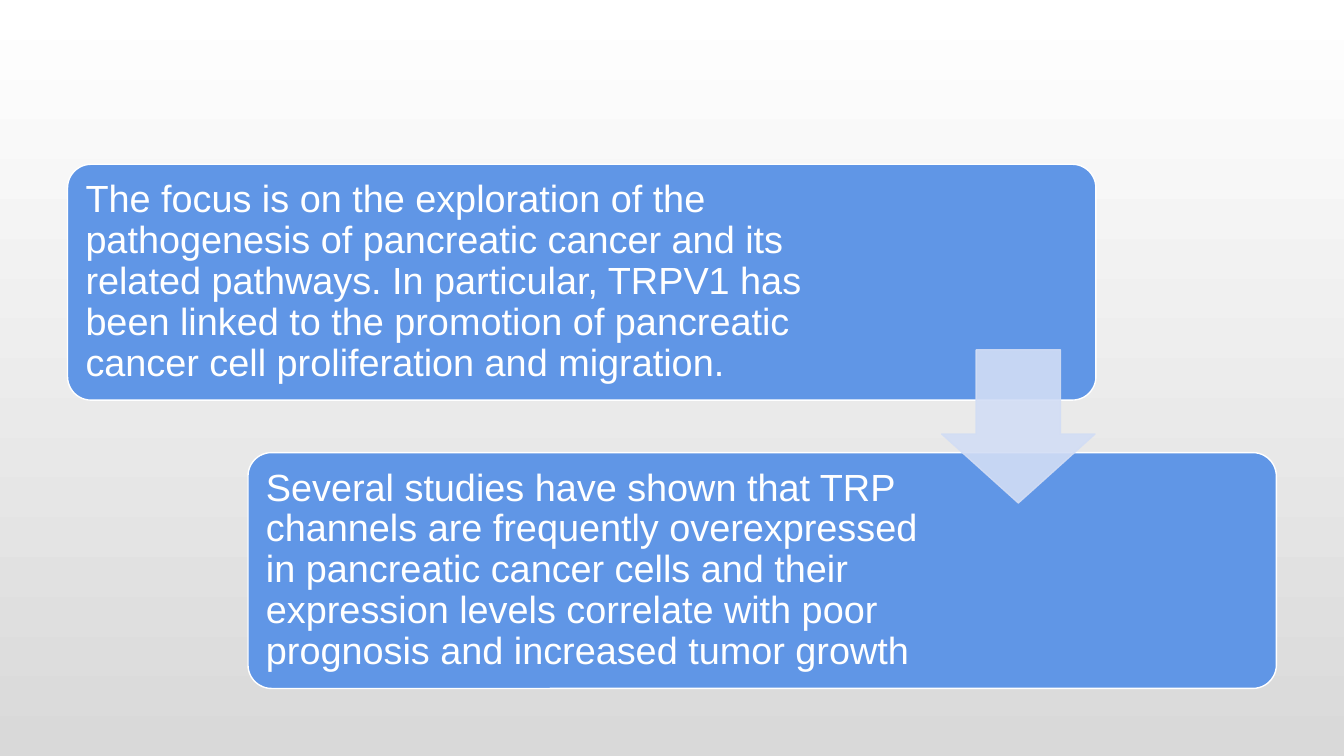
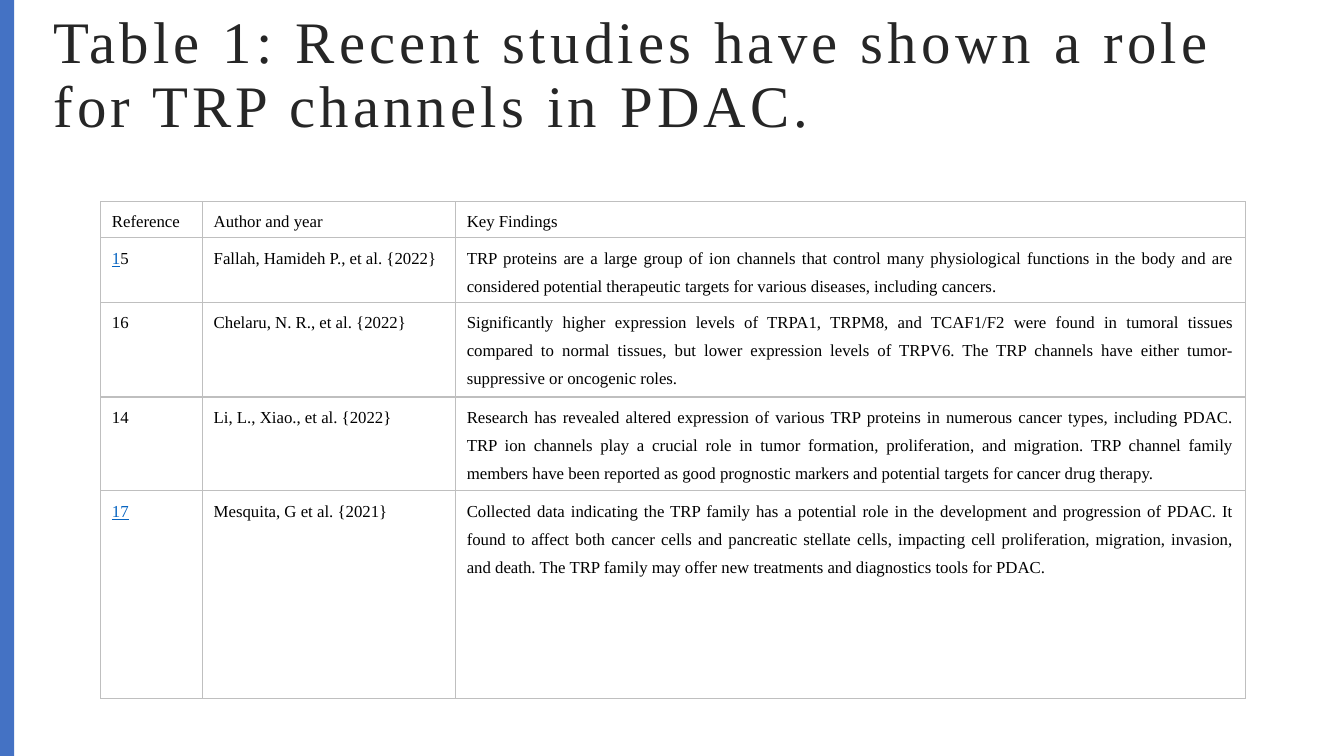
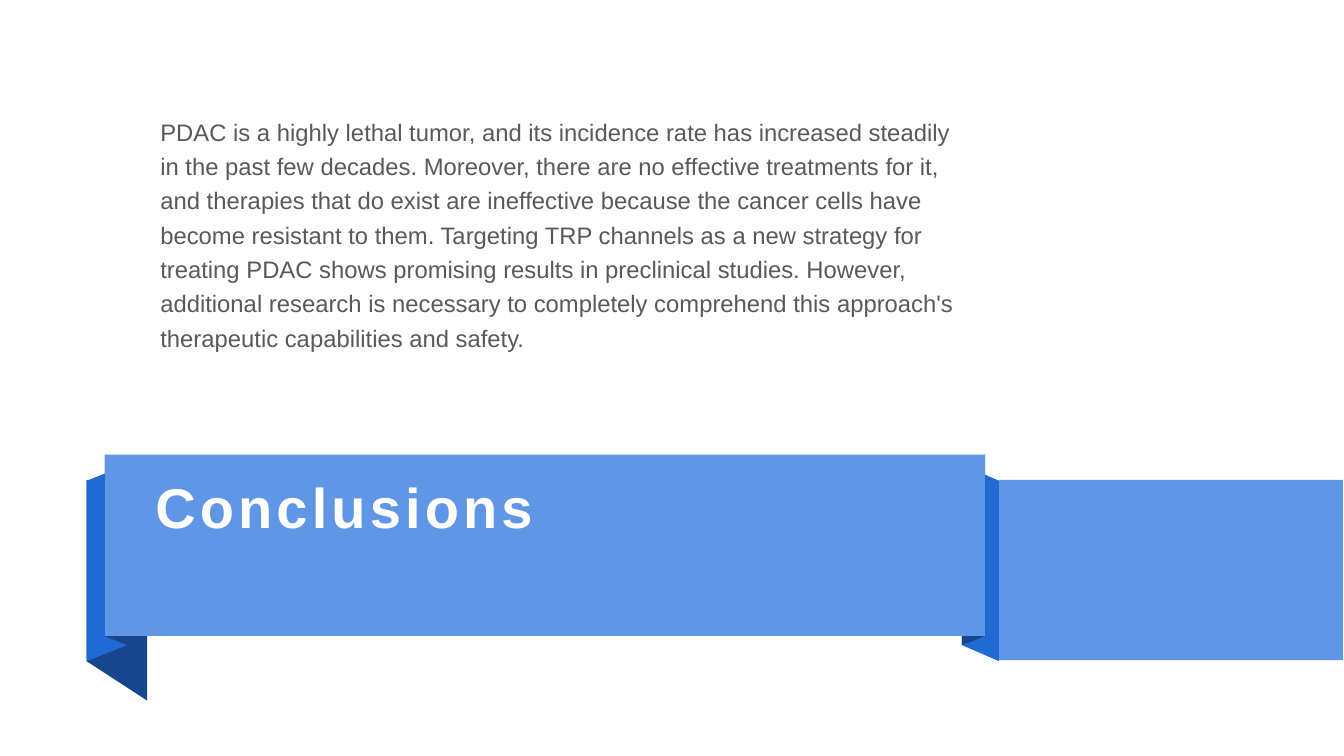
from lxml import etree
from pptx import Presentation, util as u
from pptx.dml.color import RGBColor
from pptx.enum import shapes, text
from pptx.oxml.ns import qn

Inches, Pt = u.Inches, u.Pt

# Shared colours and fonts
WHITE = RGBColor(0xFF, 0xFF, 0xFF)
BLACK = RGBColor(0x00, 0x00, 0x00)
INK = RGBColor(0x26, 0x26, 0x26)
BODY_GREY = RGBColor(0x59, 0x59, 0x59)
PALE_GREY = RGBColor(0xD9, 0xD9, 0xD9)
GRID_GREY = RGBColor(0xBF, 0xBF, 0xBF)
LIGHT_BLUE = RGBColor(0x60, 0x96, 0xE6)
ARROW_BLUE = RGBColor(0xD2, 0xDD, 0xF5)
EDGE_BLUE = RGBColor(0x44, 0x72, 0xC4)
MID_BLUE = RGBColor(0x21, 0x69, 0xD3)
DARK_BLUE = RGBColor(0x16, 0x46, 0x8D)
LINK_BLUE = RGBColor(0x05, 0x63, 0xC1)
SANS, SERIF = "Arial", "Times New Roman"
TITLE_AND_CONTENT, TITLE_ONLY, BLANK = 1, 5, 6

# Slide content
STEPS = [
    # left, top, right inset, text
    (0.67, 1.63, 2.4,
     "The focus is on the exploration of the pathogenesis of pancreatic cancer "
     "and its related pathways. In particular, TRPV1 has been linked to the "
     "promotion of pancreatic cancer cell proliferation and migration."),
    (2.46, 4.49, 3.4,
     "Several studies have shown that TRP channels are frequently overexpressed "
     "in pancreatic cancer cells and their expression levels correlate with "
     "poor prognosis and increased tumor growth"),
]
STUDIES = [
    ("Reference", "Author and year", "Key Findings"),
    ("15", "Fallah, Hamideh P., et al. {2022}",
     "TRP proteins are a large group of ion channels that control many "
     "physiological functions in the body and are considered potential "
     "therapeutic targets for various diseases, including cancers."),
    ("16", "Chelaru, N. R., et al. {2022}",
     "Significantly higher expression levels of TRPA1, TRPM8, and TCAF1/F2 were "
     "found in tumoral tissues compared to normal tissues, but lower expression "
     "levels of TRPV6. The TRP channels have either tumor-suppressive or "
     "oncogenic roles."),
    ("14", "Li, L., Xiao., et al. {2022}",
     "Research has revealed altered expression of various TRP proteins in "
     "numerous cancer types, including PDAC. TRP ion channels play a crucial "
     "role in tumor formation, proliferation, and migration. TRP channel family "
     "members have been reported as good prognostic markers and potential "
     "targets for cancer drug therapy."),
    ("17", "Mesquita, G et al. {2021}",
     "Collected data indicating the TRP family has a potential role in the "
     "development and progression of PDAC. It found to affect both cancer cells "
     "and pancreatic stellate cells, impacting cell proliferation, migration, "
     "invasion, and death. The TRP family may offer new treatments and "
     "diagnostics tools for PDAC."),
]
LINKED = {"15": 1, "17": 2}  # leading digits styled as a link
COLUMNS = [1.01, 2.51, 7.83]
ROWS = [0.36, 0.64, 0.94, 0.93, 2.06]
CONCLUSION = (
    "PDAC is a highly lethal tumor, and its incidence rate has increased "
    "steadily in the past few decades. Moreover, there are no effective "
    "treatments for it, and therapies that do exist are ineffective because the "
    "cancer cells have become resistant to them. Targeting TRP channels as a new "
    "strategy for treating PDAC shows promising results in preclinical studies. "
    "However, additional research is necessary to completely comprehend this "
    "approach's therapeutic capabilities and safety.")


# Helpers
def add_slide(prs, layout):
    return prs.slides.add_slide(prs.slide_layouts[layout])


def place(sp, left, top, width, height):
    sp.left, sp.top = Inches(left), Inches(top)
    sp.width, sp.height = Inches(width), Inches(height)


def style_paragraph(p, font, size, color, spacing, bold=False):
    p.font.name, p.font.size, p.font.bold = font, Pt(size), bold
    p.font.color.rgb = color
    p.line_spacing = spacing


def paint(sp, fill, line=None):
    sp.shadow.inherit = False
    sp.fill.solid()
    sp.fill.fore_color.rgb = fill
    if line is None:
        sp.line.fill.background()
    else:
        sp.line.color.rgb = line
        sp.line.width = Pt(1)


def add_block(s, kind, left, top, width, height, fill, line=None):
    sp = s.shapes.add_shape(kind, Inches(left), Inches(top),
                            Inches(width), Inches(height))
    paint(sp, fill, line)
    return sp


def set_title(s, words, box, font, size, color, bold=False):
    sp = s.shapes.title
    place(sp, *box)
    tf = sp.text_frame
    tf.text = words
    tf.word_wrap = True
    tf.auto_size = text.MSO_AUTO_SIZE.NONE
    tf.vertical_anchor = text.MSO_ANCHOR.TOP
    p = tf.paragraphs[0]
    p.alignment = text.PP_ALIGN.LEFT
    style_paragraph(p, font, size, color, 0.9, bold)
    p.font._element.set("spc", "300")
    return sp


def add_step(s, left, top, right_inset, words):
    sp = add_block(s, shapes.MSO_SHAPE.ROUNDED_RECTANGLE, left, top, 10.2, 2.34,
                   LIGHT_BLUE, WHITE)
    sp.adjustments[0] = 0.1
    tf = sp.text_frame
    tf.word_wrap = True
    tf.vertical_anchor = text.MSO_ANCHOR.MIDDLE
    tf.margin_left, tf.margin_right = Inches(0.11), Inches(right_inset)
    tf.margin_top = tf.margin_bottom = Inches(0.11)
    tf.text = words
    p = tf.paragraphs[0]
    p.alignment = text.PP_ALIGN.LEFT
    style_paragraph(p, SANS, 27, WHITE, 0.9)


def set_borders(cell, color):
    tcPr = cell._tc.get_or_add_tcPr()
    for i, side in enumerate(("lnL", "lnR", "lnT", "lnB")):
        ln = etree.Element(qn("a:" + side), w=str(Pt(1)))
        fill = etree.SubElement(ln, qn("a:solidFill"))
        etree.SubElement(fill, qn("a:srgbClr"), val=str(color))
        tcPr.insert(i, ln)


def fill_cell(cell, words):
    cell.fill.background()
    set_borders(cell, GRID_GREY)
    cell.margin_left = cell.margin_right = Inches(0.11)
    cell.margin_top, cell.margin_bottom = Inches(0.02), 0
    p = cell.text_frame.paragraphs[0]
    p.alignment = text.PP_ALIGN.JUSTIFY
    style_paragraph(p, SERIF, 12, BLACK, 1.5)
    split = LINKED.get(words, 0)
    if split:
        r = p.add_run()
        r.text = words[:split]
        r.font.color.rgb = LINK_BLUE
        r.font.underline = True
    if words[split:]:
        p.add_run().text = words[split:]


def add_fold(s, x1, top1, x2, top2, height, color):
    """Ribbon fold: a parallelogram with two upright sides."""
    corners = [(x1, top1 + height), (x2, top2 + height), (x2, top2), (x1, top1)]
    points = [(Inches(x), Inches(y)) for x, y in corners]
    builder = s.shapes.build_freeform(*points[0])
    builder.add_line_segments(points[1:], close=True)
    paint(builder.convert_to_shape(), color)


# Slides
def build_focus(prs):
    s = add_slide(prs, BLANK)
    fill = s.background.fill
    fill.gradient()
    fill.gradient_angle = 270
    for stop, color in zip(fill.gradient_stops, (WHITE, PALE_GREY)):
        stop.color.rgb = color
    for step in STEPS:
        add_step(s, *step)
    arrow = add_block(s, shapes.MSO_SHAPE.DOWN_ARROW, 9.34, 3.47, 1.52, 1.52,
                      ARROW_BLUE, ARROW_BLUE)
    arrow.adjustments[0], arrow.adjustments[1] = 0.55, 0.45
    for clr in arrow._element.spPr.iter(qn("a:srgbClr")):
        etree.SubElement(clr, qn("a:alpha"), val="90000")


def build_studies(prs):
    s = add_slide(prs, TITLE_ONLY)
    set_title(s, "Table 1: Recent studies have shown a role for TRP channels in PDAC.",
              (0.43, 0.08, 12.48, 1.45), SERIF, 42, INK)
    add_block(s, shapes.MSO_SHAPE.RECTANGLE, 0, 0, 0.14, 7.5, EDGE_BLUE)
    table = s.shapes.add_table(len(ROWS), len(COLUMNS), Inches(1), Inches(2),
                               Inches(sum(COLUMNS)), Inches(sum(ROWS))).table
    table.first_row = table.horz_banding = False
    for column, width in zip(table.columns, COLUMNS):
        column.width = Inches(width)
    for row, height, study in zip(table.rows, ROWS, STUDIES):
        row.height = Inches(height)
        for cell, words in zip(row.cells, study):
            fill_cell(cell, words)


def build_conclusions(prs):
    s = add_slide(prs, TITLE_AND_CONTENT)
    # Ribbon, from back to front
    add_fold(s, 0.86, 4.76, 1.46, 5.15, 1.8, DARK_BLUE)
    for outer, inner, edge in ((0.86, 1.26, 1.04), (9.91, 9.54, 9.77)):
        add_fold(s, outer, 4.77, inner, 4.61, 1.79, MID_BLUE)
        add_fold(s, edge, 4.51, inner, 4.6, 1.8, DARK_BLUE)
    add_block(s, shapes.MSO_SHAPE.RECTANGLE, 1.04, 4.51, 8.73, 1.8, LIGHT_BLUE)
    add_block(s, shapes.MSO_SHAPE.RECTANGLE, 9.91, 4.76, 3.41, 1.79, LIGHT_BLUE)
    title = set_title(s, "Conclusions", (1.44, 4.71, 8.15, 1.33),
                      SANS, 40, WHITE, bold=True)
    title.element.getparent().append(title.element)  # in front of the ribbon

    body = s.placeholders[1]
    place(body, 1.49, 1.06, 8.27, 3.09)
    tf = body.text_frame
    tf.text = CONCLUSION
    tf.auto_size = text.MSO_AUTO_SIZE.NONE
    tf.vertical_anchor = text.MSO_ANCHOR.TOP
    p = tf.paragraphs[0]
    style_paragraph(p, SANS, 17, BODY_GREY, 1.2)
    p.space_before = 0
    pPr = p._p.get_or_add_pPr()
    pPr.set("marL", "0")
    pPr.set("indent", "0")
    pPr.insert_element_before(pPr.makeelement(qn("a:buNone")),
                              "a:tabLst", "a:defRPr", "a:extLst")


def main():
    prs = Presentation()
    prs.slide_width, prs.slide_height = Inches(13.33), Inches(7.5)
    build_focus(prs)
    build_studies(prs)
    build_conclusions(prs)
    prs.save("out.pptx")


if __name__ == "__main__":
    main()
